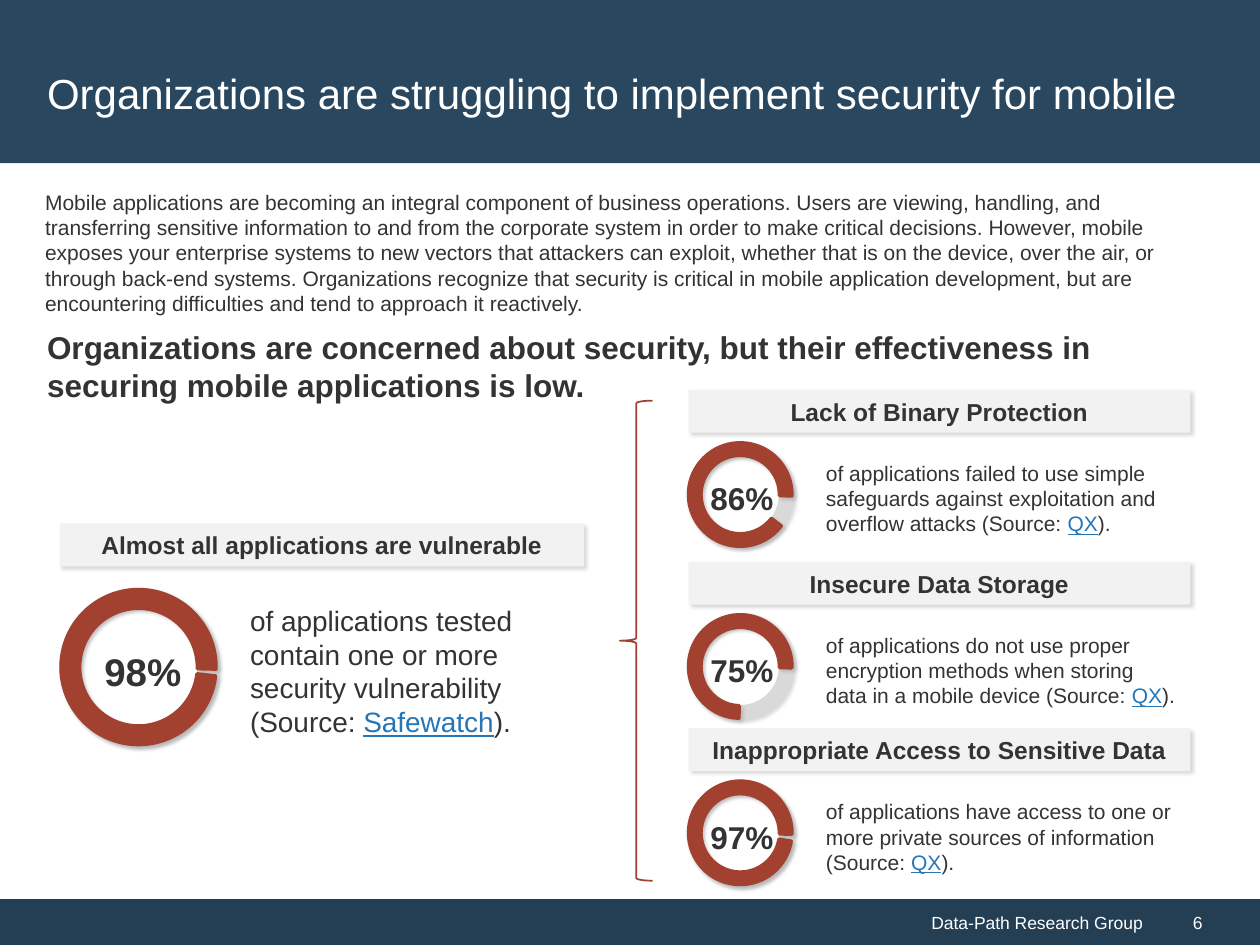
import pptx
import pptx.dml.color
import pptx.enum.shapes
import pptx.enum.text
import pptx.oxml
import pptx.oxml.ns
import pptx.util

COLS, ROWS = 100, 75
COLORS = {
    "band": "29475F", "footer": "243F54", "text": "333333", "white": "FFFFFF",
    "link": "2576B7", "track": "D9D9D9", "dial": "A24130", "header": "F2F2F2",
}
SHAPE = pptx.enum.shapes.MSO_SHAPE
ALIGN = pptx.enum.text.PP_ALIGN
ANCHOR = pptx.enum.text.MSO_ANCHOR
SHADOW = (
    f'<a:effectLst {pptx.oxml.ns.nsdecls("a")}>'
    '<a:outerShdw blurRad="25400" dist="25400" dir="2700000" algn="tl" rotWithShape="0">'
    '<a:srgbClr val="000000"><a:alpha val="15000"/></a:srgbClr>'
    '</a:outerShdw></a:effectLst>'
)
LARGE = {"dial": 12.3, "dial_left": 0.1, "dial_gap": 5.25, "label_left": 2.55,
         "label_size": 22, "text_left": 13.2, "text_height": 11.1, "text_size": 16}
SMALL = {"dial": 8.2, "dial_left": 0, "dial_gap": 4.2, "label_left": 0.75,
         "label_size": 18, "text_left": 9, "text_height": 7.9, "text_size": 12}


def rgb(name):
    """Return the named palette colour."""
    return pptx.dml.color.RGBColor.from_string(COLORS[name])


def place(prs, box):
    """Turn a box in grid columns and rows into slide lengths."""
    col, row = prs.slide_width / COLS, prs.slide_height / ROWS
    return [round(n * unit) for n, unit in zip(box, (col, row, col, row))]


def add_text(sp, runs, size=12, color="text", bold=False, align=ALIGN.LEFT,
             anchor=ANCHOR.TOP, left=0.1, right=0.1, spacing=None):
    """Write one paragraph; runs is a string or a list of (text, is_link)."""
    tf = sp.text_frame
    tf.word_wrap = True
    tf.vertical_anchor = anchor
    tf.margin_left, tf.margin_right = pptx.util.Inches(left), pptx.util.Inches(right)
    p = tf.paragraphs[0]
    p.alignment = align
    if spacing:
        p.line_spacing = pptx.util.Pt(spacing)
    for text, is_link in [(runs, False)] if isinstance(runs, str) else runs:
        r = p.add_run()
        r.text = text
        r.font.name, r.font.size, r.font.bold = "Arial", pptx.util.Pt(size), bold
        r.font.underline = is_link
        r.font.color.rgb = rgb("link" if is_link else color)


def add_box(prs, slide, box, runs, **style):
    """Add a text box to the grid."""
    add_text(slide.shapes.add_textbox(*place(prs, box)), runs, **style)


def add_shape(prs, slide, kind, box, fill=None, line=None, width=2, shadow=False, adj=()):
    """Add a preset shape to the grid."""
    sp = slide.shapes.add_shape(kind, *place(prs, box))
    for i, value in enumerate(adj):
        sp.adjustments[i] = value
    if fill:
        sp.fill.solid()
        sp.fill.fore_color.rgb = rgb(fill)
    else:
        sp.fill.background()
    if line:
        sp.line.color.rgb = rgb(line)
        sp.line.width = pptx.util.Pt(width)
    else:
        sp.line.fill.background()
    if shadow:
        sp._element.spPr.append(pptx.oxml.parse_xml(SHADOW))
    else:
        sp.shadow.inherit = False
    return sp


def add_title(prs, slide, box):
    """Draw the title band."""
    left, top, width, height = box
    add_shape(prs, slide, SHAPE.RECTANGLE, box, "band")
    add_box(prs, slide, (left + 2.75, top + 2.85, width - 5.7, height - 3.6),
            "Organizations are struggling to implement security for mobile",
            size=24, color="white", anchor=ANCHOR.MIDDLE, spacing=26)


def add_intro(prs, slide, box):
    """Draw the opening paragraph and the key statement below it."""
    left, top, width, height = box
    add_box(prs, slide, (left, top, width, 11.1),
            "Mobile applications are becoming an integral component of business operations. "
            "Users are viewing, handling, and transferring sensitive information to and from "
            "the corporate system in order to make critical decisions. However, mobile exposes "
            "your enterprise systems to new vectors that attackers can exploit, whether that is "
            "on the device, over the air, or through back-end systems. Organizations recognize "
            "that security is critical in mobile application development, but are encountering "
            "difficulties and tend to approach it reactively.")
    add_box(prs, slide, (left + 0.15, top + 11, width - 0.15, height - 11),
            "Organizations are concerned about security, but their effectiveness in "
            "securing mobile applications is low.", size=18, bold=True)


def add_stat(prs, slide, box, heading, percent, gap_angle, text, source, style):
    """Draw a heading, a percentage dial and its explanation."""
    left, top, width = box
    dial = style["dial"]
    dial_top = top + style["dial_gap"]
    middle = dial_top + dial / 2 + 0.3
    dial_box = (left + style["dial_left"], dial_top, dial, dial)
    head = add_shape(prs, slide, SHAPE.RECTANGLE, (left, top, width, 3.4), "header", shadow=True)
    add_text(head, heading, size=14, bold=True, align=ALIGN.CENTER, anchor=ANCHOR.MIDDLE)
    add_shape(prs, slide, SHAPE.DONUT, dial_box, "track", "track", shadow=True, adj=[0.11])
    add_shape(prs, slide, SHAPE.BLOCK_ARC, dial_box, "dial", "dial", shadow=True,
              adj=[gap_angle * 0.6, 1.5 * 0.6, 0.12])
    add_box(prs, slide, (left + style["label_left"], middle - 2, 10.7, 4), percent,
            size=style["label_size"], bold=True, anchor=ANCHOR.MIDDLE)
    height = style["text_height"]
    add_box(prs, slide,
            (left + style["text_left"], middle - height / 2, width - style["text_left"], height),
            [(f"{text} (Source: ", False), (source, True), (").", False)],
            size=style["text_size"], anchor=ANCHOR.MIDDLE, left=0.19)


def add_footer(prs, slide, box):
    """Draw the footer band with the publisher and page number."""
    left, top, width, height = box
    split = width * 11 / 12
    name = add_shape(prs, slide, SHAPE.RECTANGLE, (left, top, split, height), "footer")
    page = add_shape(prs, slide, SHAPE.RECTANGLE,
                     (left + split, top, width - split, height), "footer")
    style = {"size": 10, "color": "white", "anchor": ANCHOR.MIDDLE}
    add_text(name, "Data-Path Research Group", align=ALIGN.RIGHT, **style)
    add_text(page, "6", left=0.3, **style)


def main():
    """Build and save the slide."""
    prs = pptx.Presentation()
    prs.slide_width, prs.slide_height = pptx.util.Inches(10), pptx.util.Inches(7.5)
    slide = prs.slides.add_slide(prs.slide_layouts[6])
    add_footer(prs, slide, (0, 71.35, COLS, ROWS - 71.35))
    add_title(prs, slide, (0, 0, COLS, 12.95))
    add_intro(prs, slide, (2.6, 14.55, 93.4, 18.2))
    add_stat(prs, slide, (4.75, 41.55, 41.6), "Almost all applications are vulnerable", "98%", 6.6,
             "of applications tested contain one or more security vulnerability",
             "Safewatch", LARGE)
    add_shape(prs, slide, SHAPE.LEFT_BRACE, (49.2, 31.8, 2.6, 38.1), line="dial", width=1)
    causes = [
        (30.95, "Lack of Binary Protection", "86%", 37.4,
         "of applications failed to use simple safeguards against exploitation and "
         "overflow attacks"),
        (44.6, "Insecure Data Storage", "75%", 91.5,
         "of applications do not use proper encryption methods when storing data in a "
         "mobile device"),
        (57.8, "Inappropriate Access to Sensitive Data", "97%", 9.3,
         "of applications have access to one or more private sources of information"),
    ]
    for top, *content in causes:
        add_stat(prs, slide, (54.65, top, 39.8), *content, "QX", SMALL)
    prs.save("out.pptx")


if __name__ == "__main__":
    main()
